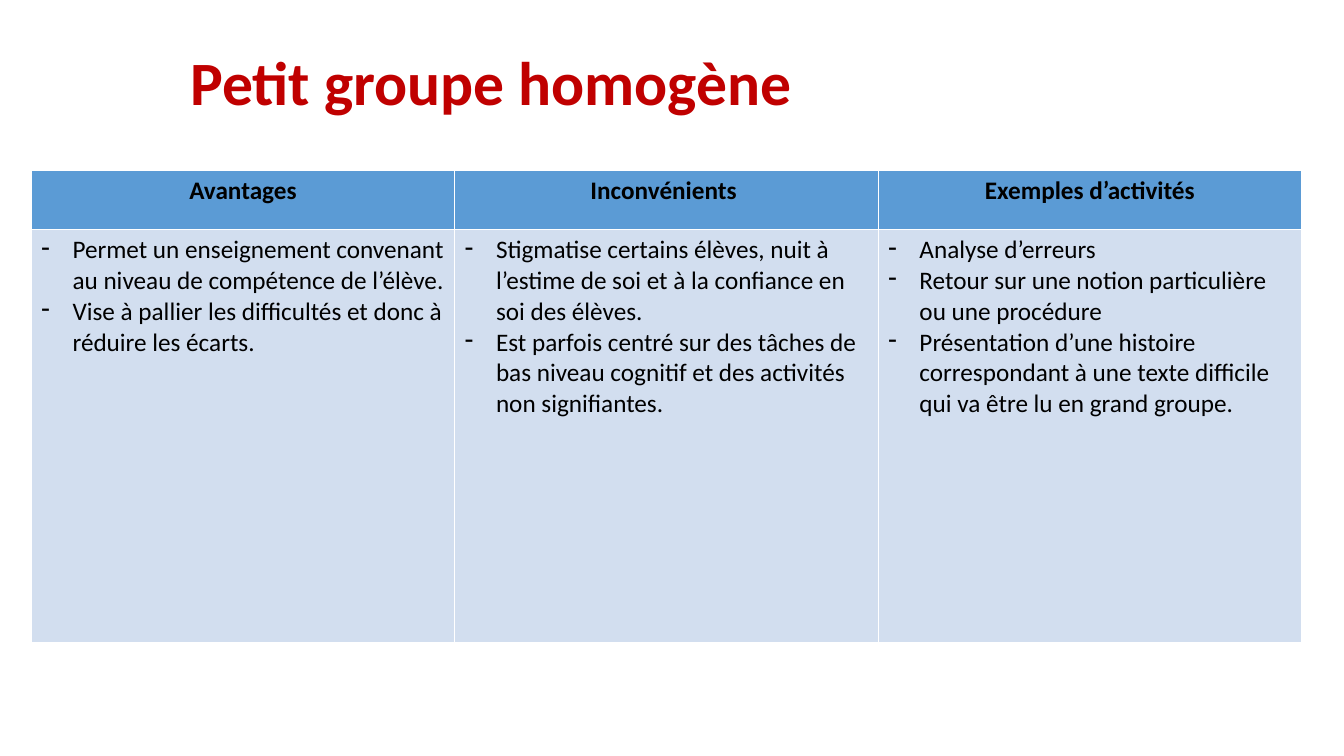
from dataclasses import dataclass

from lxml import etree
from pptx import Presentation
from pptx.dml.color import RGBColor
from pptx.enum.text import MSO_ANCHOR, PP_ALIGN
from pptx.oxml.ns import qn
from pptx.util import Inches, Pt

CENTER = PP_ALIGN.CENTER
MIDDLE = MSO_ANCHOR.MIDDLE
FONT = "Calibri"
COLORS = {
    "title": "C00000",
    "text": "000000",
    "header": "5B9BD5",
    "body": "D2DEEF",
}
COLUMN_WIDTH = 4.2
ROW_HEIGHTS = (0.59, 4.1)
BULLET_INDENT = Inches(0.31)


@dataclass(frozen=True)
class Column:
    heading: str
    points: tuple[str, ...]


COLUMNS = (
    Column("Avantages", (
        "Permet un enseignement convenant au niveau de compétence de l’élève.",
        "Vise à pallier les difficultés et donc à réduire les écarts.",
    )),
    Column("Inconvénients ", (
        "Stigmatise certains élèves, nuit à l’estime de soi et à la confiance en soi des élèves.",
        "Est parfois centré sur des tâches de bas niveau cognitif et des activités non signifiantes.",
    )),
    Column("Exemples d’activités", (
        "Analyse d’erreurs",
        "Retour sur une notion particulière ou une procédure",
        "Présentation d’une histoire correspondant à une texte difficile qui va être lu en grand groupe.",
    )),
)


def style_font(para, size: int, color: str, bold: bool) -> None:
    font = para.font
    font.name = FONT
    font.size = Pt(size)
    font.bold = bold
    font.color.rgb = RGBColor.from_string(COLORS[color])


def add_dash(para) -> None:
    properties = para._p.get_or_add_pPr()
    properties.set("marL", str(BULLET_INDENT))
    properties.set("indent", str(-BULLET_INDENT))
    bullet = etree.Element(qn("a:buChar"), char="-")
    properties.insert(0, bullet)


def fill_cell(cell, color: str) -> None:
    cell.fill.solid()
    cell.fill.fore_color.rgb = RGBColor.from_string(COLORS[color])


def add_title(page, text: str) -> None:
    box = page.shapes.add_textbox(Inches(1.79), Inches(0.44), Inches(9.75), Inches(0.81))
    frame = box.text_frame
    frame.word_wrap = True
    frame.vertical_anchor = MIDDLE
    para = frame.paragraphs[0]
    para.text = text
    para.line_spacing = 0.9
    style_font(para, 44, "title", True)


def add_comparison(page, columns: tuple[Column, ...]) -> None:
    table = page.shapes.add_table(
        len(ROW_HEIGHTS), len(columns), Inches(0.31), Inches(1.69),
        Inches(COLUMN_WIDTH * len(columns)), Inches(sum(ROW_HEIGHTS)),
    ).table
    for row, height in zip(table.rows, ROW_HEIGHTS):
        row.height = Inches(height)
    for index, column in enumerate(columns):
        table.columns[index].width = Inches(COLUMN_WIDTH)

        header = table.cell(0, index)
        fill_cell(header, "header")
        para = header.text_frame.paragraphs[0]
        para.text = column.heading
        para.alignment = CENTER
        style_font(para, 18, "text", True)

        body = table.cell(1, index)
        fill_cell(body, "body")
        body.text = "\n".join(column.points)
        for para in body.text_frame.paragraphs:
            style_font(para, 18, "text", False)
            add_dash(para)


def main() -> None:
    deck = Presentation()
    deck.slide_width = Inches(13.33)
    deck.slide_height = Inches(7.5)
    page = deck.slides.add_slide(deck.slide_layouts[6])
    add_title(page, "Petit groupe homogène")
    add_comparison(page, COLUMNS)
    deck.save("out.pptx")


if __name__ == "__main__":
    main()
